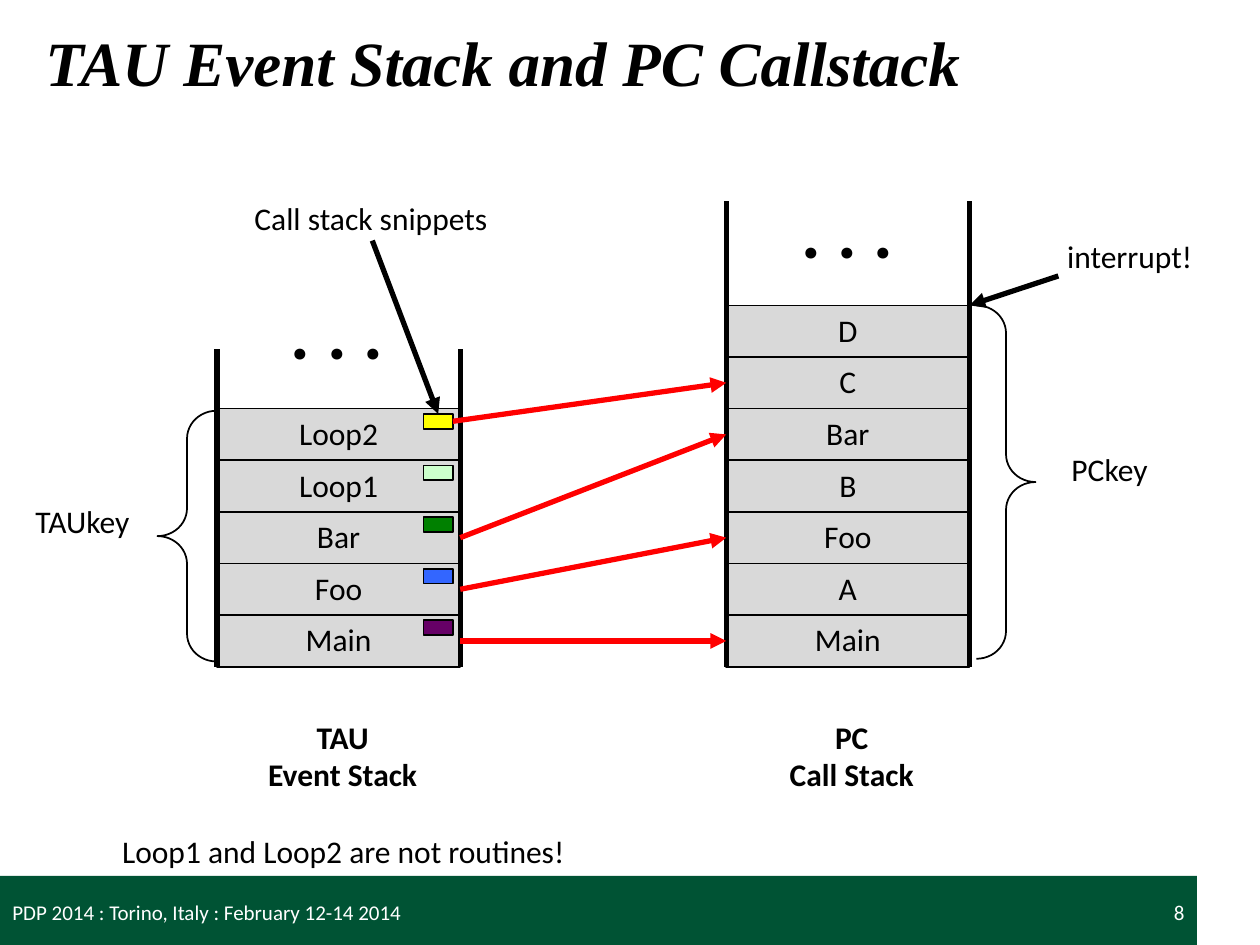
"""Build the slide comparing the TAU event stack with the PC call stack."""
import pptx
import pptx.dml.color
import pptx.enum.shapes
import pptx.enum.text
import pptx.oxml
import pptx.oxml.ns
import pptx.util

Pt = pptx.util.Pt
RGBColor = pptx.dml.color.RGBColor
SHAPE = pptx.enum.shapes.MSO_SHAPE
ALIGN = pptx.enum.text.PP_ALIGN
ANCHOR = pptx.enum.text.MSO_ANCHOR
AUTO_SIZE = pptx.enum.text.MSO_AUTO_SIZE

BLACK = RGBColor(0x00, 0x00, 0x00)
WHITE = RGBColor(0xFF, 0xFF, 0xFF)
RED = RGBColor(0xFF, 0x00, 0x00)
GRAY = RGBColor(0xD9, 0xD9, 0xD9)
GREEN = RGBColor(0x00, 0x53, 0x34)
YELLOW = RGBColor(0xFF, 0xFF, 0x00)
MINT = RGBColor(0xCC, 0xFF, 0xCC)
LEAF = RGBColor(0x00, 0x80, 0x00)
BLUE = RGBColor(0x33, 0x66, 0xFF)
PURPLE = RGBColor(0x66, 0x00, 0x66)

CELL_W, CELL_H, STACK_BOTTOM = 139, 29.5, 381


def write(sp, text, size=18, color=BLACK, bold=False, align=ALIGN.CENTER, inset=(5, 3)):
    tf = sp.text_frame
    tf.text = text
    tf.margin_left = tf.margin_right = Pt(inset[0])
    tf.margin_top = tf.margin_bottom = Pt(inset[1])
    for p in tf.paragraphs:
        p.alignment = align
        for r in p.runs:
            r.font.name = "Calibri"
            r.font.size = Pt(size)
            r.font.bold = bold
            r.font.color.rgb = color


def connect(x1, y1, x2, y2, color=BLACK, arrow=True):
    cx = s.shapes.add_connector(
        pptx.enum.shapes.MSO_CONNECTOR.STRAIGHT, Pt(x1), Pt(y1), Pt(x2), Pt(y2))
    cx.line.color.rgb = color
    cx.line.width = Pt(3)
    props = cx._element.spPr
    if arrow:
        tail = pptx.oxml.parse_xml(
            f'<a:tailEnd {pptx.oxml.ns.nsdecls("a")} type="triangle"/>')
        cx.line._get_or_add_ln().append(tail)
    props.append(pptx.oxml.parse_xml(f'<a:effectLst {pptx.oxml.ns.nsdecls("a")}/>'))
    return cx


prs = pptx.Presentation()
prs.slide_width, prs.slide_height = Pt(720), Pt(540)
s = prs.slides.add_slide(prs.slide_layouts[5])

sp = s.shapes.add_shape(SHAPE.RECTANGLE, Pt(0), Pt(500.5), Pt(684), Pt(39.5))
sp.shadow.inherit = False
sp.fill.solid()
sp.fill.fore_color.rgb = GREEN
sp.line.fill.background()

title = s.shapes.title
title.left, title.top, title.width, title.height = Pt(18.7), Pt(0.7), Pt(701.3), Pt(69)
title.text_frame.text = "TAU Event Stack and PC Callstack"
title.text_frame.vertical_anchor = ANCHOR.MIDDLE
p = title.text_frame.paragraphs[0]
p.alignment = ALIGN.LEFT
r = p.runs[0]
r.font.name = "Times New Roman"
r.font.size = Pt(36)
r.font.bold = r.font.italic = True
r.font.color.rgb = BLACK

stacks = [
    (124, 199.5, ["Loop2", "Loop1", "Bar", "Foo", "Main"]),
    (415, 115, ["D", "C", "Bar", "B", "Foo", "A", "Main"]),
]
cells = []
for left, rail_top, names in stacks:
    top = STACK_BOTTOM - CELL_H * len(names)
    stack = {}
    for i, name in enumerate(names):
        sp = s.shapes.add_shape(
            SHAPE.RECTANGLE, Pt(left), Pt(top + i * CELL_H), Pt(CELL_W), Pt(CELL_H))
        sp.shadow.inherit = False
        sp.fill.solid()
        sp.fill.fore_color.rgb = GRAY
        sp.line.color.rgb = BLACK
        sp.line.width = Pt(1)
        write(sp, name)
        sp.text_frame.vertical_anchor = ANCHOR.TOP
        stack[name] = sp
    cells.append(stack)
    for x in (left, left + CELL_W):
        connect(x, rail_top, x, STACK_BOTTOM, arrow=False)
events, calls = cells

snippets = []
for i, color in enumerate([YELLOW, MINT, LEAF, BLUE, PURPLE]):
    sp = s.shapes.add_shape(
        SHAPE.RECTANGLE, Pt(242), Pt(236.5 + i * CELL_H), Pt(16.8), Pt(8.5))
    sp.shadow.inherit = False
    sp.fill.solid()
    sp.fill.fore_color.rgb = color
    sp.line.color.rgb = BLACK
    sp.line.width = Pt(1)
    snippets.append(sp)

labels = [
    (". . .", 161.3, 160.5, 63.4, 56, 42, True, ALIGN.LEFT),
    (". . .", 453, 103, 63.4, 56, 42, True, ALIGN.LEFT),
    ("TAU\vEvent Stack", 147.6, 407, 96.5, 49, 18, True, ALIGN.CENTER),
    ("PC\vCall Stack", 445.7, 407, 82, 49, 18, True, ALIGN.CENTER),
    ("Loop1 and Loop2 are not routines!", 63.4, 472.3, 265.7, 26.6, 18, False, ALIGN.CENTER),
    ("TAUkey", 15.1, 283.7, 64, 26.6, 18, False, ALIGN.CENTER),
    ("PCkey", 607, 254.2, 54, 26.6, 18, False, ALIGN.CENTER),
    ("interrupt!", 604.8, 132.5, 82, 26.6, 18, False, ALIGN.LEFT),
    ("Call stack snippets", 140.4, 110.9, 144.7, 26.6, 18, False, ALIGN.LEFT),
]
for text, x, y, w, h, size, bold, align in labels:
    label = s.shapes.add_textbox(Pt(x), Pt(y), Pt(w), Pt(h))
    write(label, text, size, bold=bold, align=align)
    label.text_frame.word_wrap = False
    label.text_frame.auto_size = AUTO_SIZE.SHAPE_TO_FIT_TEXT

links = [
    (snippets[0], 3, calls["C"], 1, RED),
    (events["Bar"], 3, calls["Bar"], 1, RED),
    (events["Foo"], 3, calls["Foo"], 1, RED),
    (events["Main"], 3, calls["Main"], 1, RED),
    (label, 2, snippets[0], 0, BLACK),
]
for start, start_side, end, end_side, color in links:
    cx = connect(0, 0, 0, 0, color)
    cx.begin_connect(start, start_side)
    cx.end_connect(end, end_side)
connect(604.8, 157.7, 554, 174.5)

for shape, x, y, h in [(SHAPE.LEFT_BRACE, 90, 234.7, 143.3),
                       (SHAPE.RIGHT_BRACE, 558, 174.5, 202)]:
    sp = s.shapes.add_shape(shape, Pt(x), Pt(y), Pt(33.8), Pt(h))
    sp.shadow.inherit = False
    sp.fill.background()
    sp.line.color.rgb = BLACK
    sp.line.width = Pt(1)
    sp.adjustments[0] = 0.47

for text, x, w, align in [
        ("PDP 2014 : Torino, Italy : February 12-14 2014", 0, 473.8, ALIGN.LEFT),
        ("8", 516.2, 167.8, ALIGN.RIGHT)]:
    sp = s.shapes.add_textbox(Pt(x), Pt(502), Pt(w), Pt(38))
    write(sp, text, 12, WHITE, align=align, inset=(7.2, 7.2))
    sp.text_frame.word_wrap = True
    sp.text_frame.vertical_anchor = ANCHOR.MIDDLE

prs.save("out.pptx")
